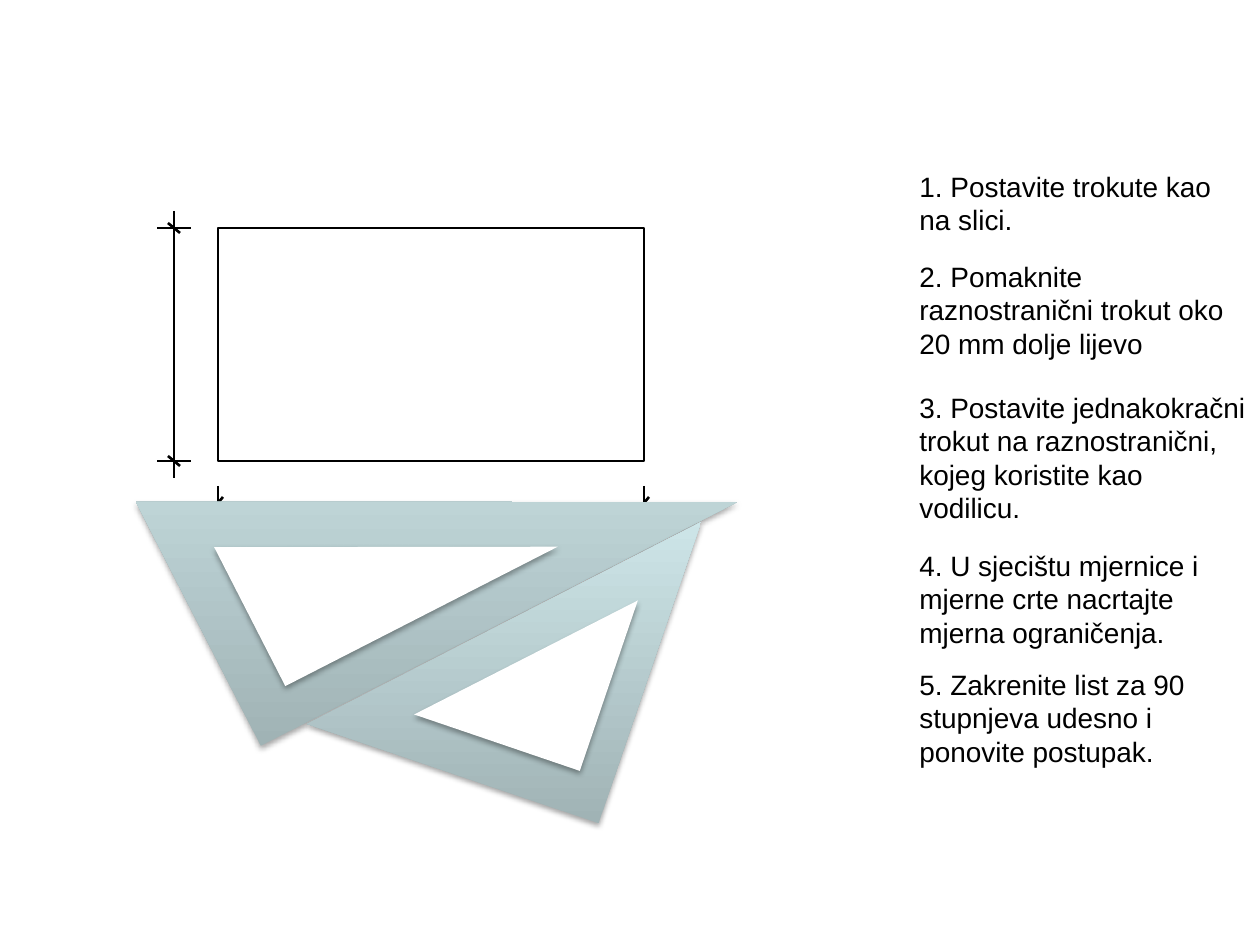
import pptx
import pptx.util
import pptx.dml.color
import pptx.enum.shapes
import pptx.enum.text
import lxml.etree

EMU_PER_PX = 914400 / 126
BLACK = pptx.dml.color.RGBColor(0, 0, 0)
WHITE = pptx.dml.color.RGBColor(255, 255, 255)
GRADIENT = [(0, pptx.dml.color.RGBColor(0xA0, 0xB3, 0xB5)),
            (80, pptx.dml.color.RGBColor(0xD0, 0xE8, 0xEB)),
            (100, pptx.dml.color.RGBColor(0xD1, 0xEA, 0xEC))]
THIN, THICK = 0.75, 1.5
NS = "http://schemas.openxmlformats.org/drawingml/2006/main"

# Measured rectangle and its dimension lines
LEFT, TOP, RIGHT, BOTTOM = 218, 228, 644, 461
DIM_X, DIM_Y = 174, 503
EXTENSION = 17

# Set squares: frame box, opening box, rotation
SET_SQUARES = [
    ((169, 365, 535, 274), (233, 469, 306, 156), 332.9),
    ((345, 469, 318, 308), (436, 570, 180, 175), 288.8),
]

# Instructions: top, width, height, text
STEP_LEFT = 907
STEPS = [
    (163, 348, 81, "1. Postavite trokute kao na slici."),
    (253, 349, 115, "2. Pomaknite raznostranični trokut oko 20 mm dolje lijevo"),
    (384, 353, 149, "3. Postavite jednakokračni trokut na raznostranični, "
                    "kojeg koristite kao vodilicu."),
    (542, 353, 115, "4. U sjecištu mjernice i mjerne crte nacrtajte "
                    "mjerna ograničenja."),
    (661, 353, 115, "5. Zakrenite list za 90 stupnjeva udesno i ponovite postupak."),
]


def px(n):
    return pptx.util.Emu(round(n * EMU_PER_PX))


def add_line(shapes, x1, y1, x2, y2, width):
    line = shapes.add_connector(pptx.enum.shapes.MSO_CONNECTOR.STRAIGHT,
                                px(x1), px(y1), px(x2), px(y2))
    line.line.color.rgb = BLACK
    line.line.width = pptx.util.Pt(width)
    lxml.etree.SubElement(line._element.spPr, f"{{{NS}}}effectLst")


def add_rectangle(shapes):
    sp = shapes.add_shape(pptx.enum.shapes.MSO_SHAPE.RECTANGLE, px(LEFT), px(TOP),
                          px(RIGHT - LEFT), px(BOTTOM - TOP))
    sp.shadow.inherit = False
    sp.fill.background()
    sp.line.color.rgb = BLACK
    sp.line.width = pptx.util.Pt(THICK)


def set_gradient(sp):
    stops = "".join(f'<a:gs pos="{pos * 1000}"><a:srgbClr val="{color}"/></a:gs>'
                    for pos, color in GRADIENT)
    grad = lxml.etree.fromstring(
        f'<a:gradFill xmlns:a="{NS}" rotWithShape="0"><a:gsLst>{stops}</a:gsLst>'
        '<a:lin ang="16200000" scaled="0"/></a:gradFill>')
    sp._element.spPr.find(f"{{{NS}}}prstGeom").addnext(grad)


def set_shadow(sp):
    sp.shadow.inherit = False
    effects = sp._element.spPr.find(f"{{{NS}}}effectLst")
    effects.append(lxml.etree.fromstring(
        f'<a:outerShdw xmlns:a="{NS}" blurRad="40000" dist="23000" dir="5400000" '
        f'rotWithShape="0"><a:srgbClr val="{BLACK}"><a:alpha val="35000"/>'
        '</a:srgbClr></a:outerShdw>'))


def add_triangle(shapes, box, rotation):
    sp = shapes.add_shape(pptx.enum.shapes.MSO_SHAPE.RIGHT_TRIANGLE,
                          *[px(n) for n in box])
    sp.rotation = rotation
    sp.line.fill.background()
    set_shadow(sp)
    return sp


def add_set_square(shapes, frame, opening, rotation):
    group = shapes.add_group_shape()
    set_gradient(add_triangle(group.shapes, frame, rotation))
    hole = add_triangle(group.shapes, opening, rotation)
    hole.fill.solid()
    hole.fill.fore_color.rgb = WHITE


def add_step(shapes, top, width, height, text):
    tf = shapes.add_textbox(px(STEP_LEFT), px(top), px(width), px(height)).text_frame
    tf.word_wrap = True
    tf.auto_size = pptx.enum.text.MSO_AUTO_SIZE.SHAPE_TO_FIT_TEXT
    tf.text = text
    font = tf.paragraphs[0].runs[0].font
    font.name = "Arial"
    font.size = pptx.util.Pt(16)
    font.color.rgb = BLACK


def main():
    prs = pptx.Presentation()
    prs.slide_width, prs.slide_height = px(1260), px(945)
    shapes = prs.slides.add_slide(prs.slide_layouts[6]).shapes

    add_rectangle(shapes)

    # Horizontal dimension, partly under the set squares
    add_line(shapes, LEFT - EXTENSION, DIM_Y, RIGHT + EXTENSION, DIM_Y, THIN)
    for x in (LEFT, RIGHT):
        add_line(shapes, x, DIM_Y - EXTENSION, x, DIM_Y + EXTENSION, THIN)
        add_line(shapes, x + 5, DIM_Y - 6, x - 5, DIM_Y + 6, THICK)

    # Vertical dimension
    add_line(shapes, DIM_X, TOP - EXTENSION, DIM_X, BOTTOM + EXTENSION, THIN)
    for y in (TOP, BOTTOM):
        add_line(shapes, DIM_X + EXTENSION, y, DIM_X - EXTENSION, y, THIN)
        add_line(shapes, DIM_X + 6, y + 5, DIM_X - 6, y - 5, THICK)

    for frame, opening, rotation in SET_SQUARES:
        add_set_square(shapes, frame, opening, rotation)

    for step in STEPS:
        add_step(shapes, *step)

    prs.save("out.pptx")


if __name__ == "__main__":
    main()
